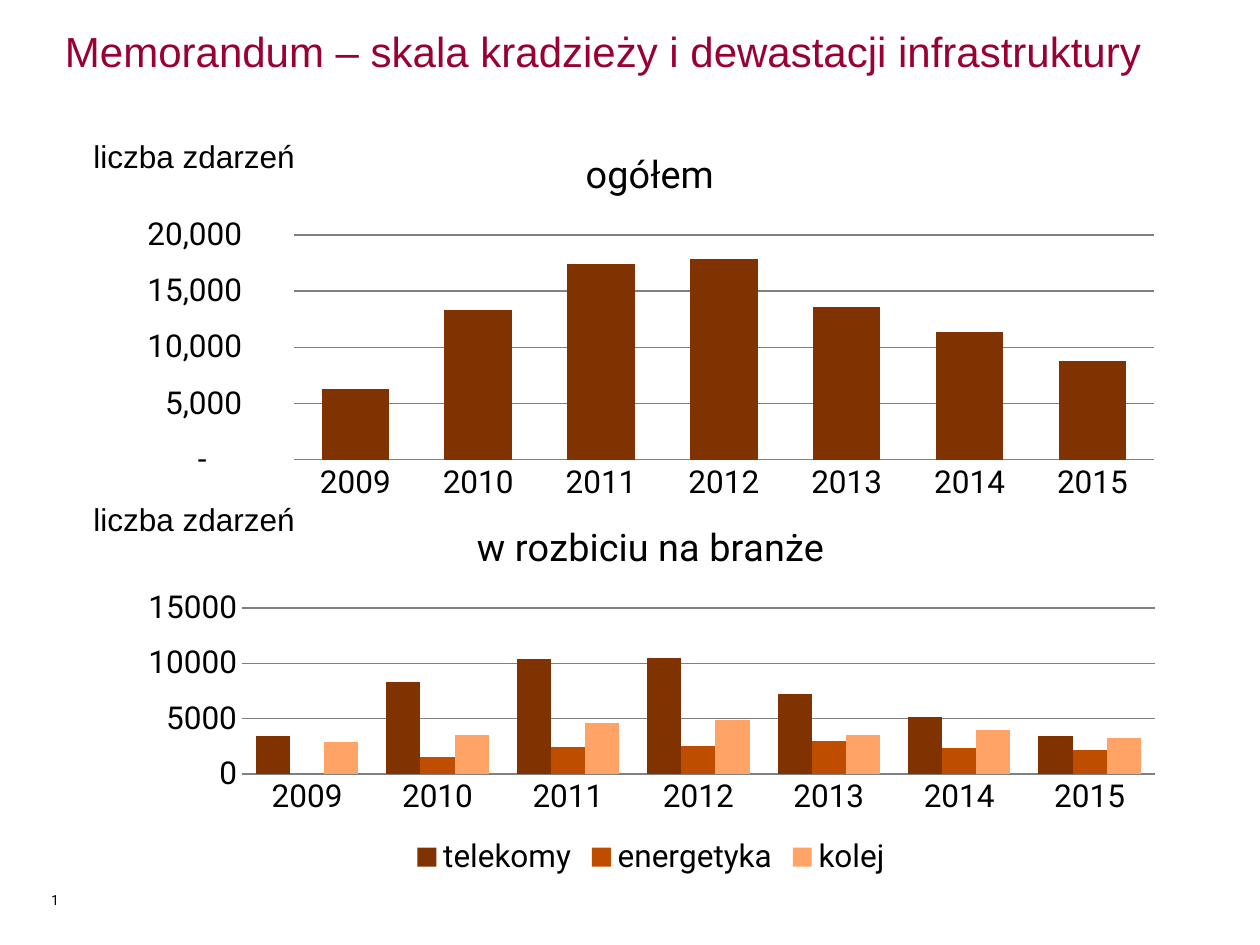
import dataclasses

import pptx
import pptx.chart.data
import pptx.dml.color
import pptx.enum.chart
import pptx.enum.text
import pptx.oxml
import pptx.oxml.ns
import pptx.util

EMU_PER_PX = 914400 / 126
YEARS = ["2009", "2010", "2011", "2012", "2013", "2014", "2015"]
TOTALS = {"ogółem": [6300, 13300, 17400, 17900, 13600, 11400, 8800]}
BY_INDUSTRY = {
    "telekomy": [3400, 8300, 10400, 10500, 7200, 5100, 3400],
    "energetyka": [0, 1500, 2400, 2500, 3000, 2300, 2200],
    "kolej": [2900, 3500, 4600, 4900, 3500, 4000, 3200],
}
ACCOUNTING_FORMAT = (
    r'_-* #,##0\ _z_ł_-;\-* #,##0\ _z_ł_-;_-* "-"??\ _z_ł_-;_-@_-'
)


@dataclasses.dataclass(frozen=True)
class Theme:
    text_font: str = "Arial"
    chart_font: str = "Roboto"
    heading: str = "990033"
    text: str = "000000"
    grid: str = "808080"
    series: tuple = ("803300", "BF4D00", "FFA366")
    heading_size: int = 24
    body_size: int = 18
    chart_title_size: float = 21.6
    number_size: int = 8


THEME = Theme()


def px(length):
    return pptx.util.Emu(round(length * EMU_PER_PX))


def color(value):
    return pptx.dml.color.RGBColor.from_string(value)


def style_font(font, name, size, value):
    font.name = name
    font.size = pptx.util.Pt(size)
    font.bold = False
    font.color.rgb = color(value)


def place(shape, box):
    shape.left, shape.top, shape.width, shape.height = map(px, box)


def add_title(slide, text, box):
    title = slide.shapes.title
    place(title, box)
    frame = title.text_frame
    frame.text = text
    frame.margin_left = frame.margin_right = 0
    frame.margin_top = frame.margin_bottom = 0
    frame.vertical_anchor = pptx.enum.text.MSO_ANCHOR.MIDDLE
    paragraph = frame.paragraphs[0]
    paragraph.alignment = pptx.enum.text.PP_ALIGN.LEFT
    style_font(paragraph.runs[0].font, THEME.text_font,
               THEME.heading_size, THEME.heading)


def add_label(slide, text, box, font_name, size):
    frame = slide.shapes.add_textbox(*map(px, box)).text_frame
    frame.text = text
    frame.word_wrap = True
    frame.auto_size = pptx.enum.text.MSO_AUTO_SIZE.SHAPE_TO_FIT_TEXT
    paragraph = frame.paragraphs[0]
    paragraph.alignment = pptx.enum.text.PP_ALIGN.CENTER
    style_font(paragraph.runs[0].font, font_name, size, THEME.text)


def set_plot_box(chart, box, plot_box):
    """Fix the inner plot area; both boxes are in slide px."""
    left, top, width, height = box
    plot_left, plot_top, plot_width, plot_height = plot_box
    fractions = {
        "x": (plot_left - left) / width,
        "y": (plot_top - top) / height,
        "w": plot_width / width,
        "h": plot_height / height,
    }
    values = "".join(f'<c:{key}Mode val="edge"/>' for key in "xy")
    values += "".join(f'<c:{key} val="{value:.4f}"/>'
                      for key, value in fractions.items())
    layout = pptx.oxml.parse_xml(
        f'<c:layout {pptx.oxml.ns.nsdecls("c")}><c:manualLayout>'
        f'<c:layoutTarget val="inner"/>{values}</c:manualLayout></c:layout>')
    plot_area = chart.element.find(".//" + pptx.oxml.ns.qn("c:plotArea"))
    for existing in plot_area.findall(pptx.oxml.ns.qn("c:layout")):
        plot_area.remove(existing)
    plot_area.insert(0, layout)


def style_axes(chart, maximum, number_format):
    for axis in (chart.category_axis, chart.value_axis):
        axis.major_tick_mark = pptx.enum.chart.XL_TICK_MARK.NONE
        axis.minor_tick_mark = pptx.enum.chart.XL_TICK_MARK.NONE
    value_axis = chart.value_axis
    value_axis.minimum_scale = 0
    value_axis.maximum_scale = maximum
    value_axis.major_unit = 5000
    value_axis.format.line.fill.background()
    value_axis.has_major_gridlines = True
    value_axis.tick_labels.number_format = number_format
    value_axis.tick_labels.number_format_is_linked = False
    for line in (chart.category_axis.format.line,
                 value_axis.major_gridlines.format.line):
        line.color.rgb = color(THEME.grid)
        line.width = pptx.util.Pt(0.75)


def add_column_chart(slide, title, series, box, plot_box, maximum,
                     number_format="General"):
    data = pptx.chart.data.CategoryChartData()
    data.categories = YEARS
    for name, values in series.items():
        data.add_series(name, values)
    chart = slide.shapes.add_chart(
        pptx.enum.chart.XL_CHART_TYPE.COLUMN_CLUSTERED,
        *map(px, box), data).chart
    style_font(chart.font, THEME.chart_font, THEME.body_size, THEME.text)

    # Title and legend
    chart.has_title = True
    chart.chart_title.include_in_layout = False
    frame = chart.chart_title.text_frame
    frame.text = title
    style_font(frame.paragraphs[0].runs[0].font, THEME.chart_font,
               THEME.chart_title_size, THEME.text)
    chart.has_legend = len(series) > 1
    if chart.has_legend:
        chart.legend.position = pptx.enum.chart.XL_LEGEND_POSITION.BOTTOM
        chart.legend.include_in_layout = False

    # Columns
    plot = chart.plots[0]
    plot.gap_width = 82
    plot.overlap = 0
    plot.vary_by_categories = False
    for column, value in zip(plot.series, THEME.series):
        column.format.fill.solid()
        column.format.fill.fore_color.rgb = color(value)
        column.invert_if_negative = False

    style_axes(chart, maximum, number_format)
    set_plot_box(chart, box, plot_box)


def main():
    presentation = pptx.Presentation()
    presentation.slide_width = px(1260)
    presentation.slide_height = px(945)
    slide = presentation.slides.add_slide(presentation.slide_layouts[5])

    add_title(slide, "Memorandum – skala kradzieży i dewastacji infrastruktury",
              (65, 21, 1131, 59))

    # Charts
    add_column_chart(slide, "w rozbiciu na branże", BY_INDUSTRY,
                     (127, 500, 1048, 382), (242, 608, 913, 166), 15000)
    add_column_chart(slide, "ogółem", TOTALS,
                     (126, 127, 1048, 382), (294, 235, 860, 225), 20000,
                     ACCOUNTING_FORMAT)

    # Axis captions and slide number
    for top in (131, 494):
        add_label(slide, "liczba zdarzeń", (78, top, 232, 50),
                  THEME.text_font, THEME.body_size)
    add_label(slide, "1", (4, 885, 102, 30),
              THEME.chart_font, THEME.number_size)

    presentation.save("out.pptx")


if __name__ == "__main__":
    main()
